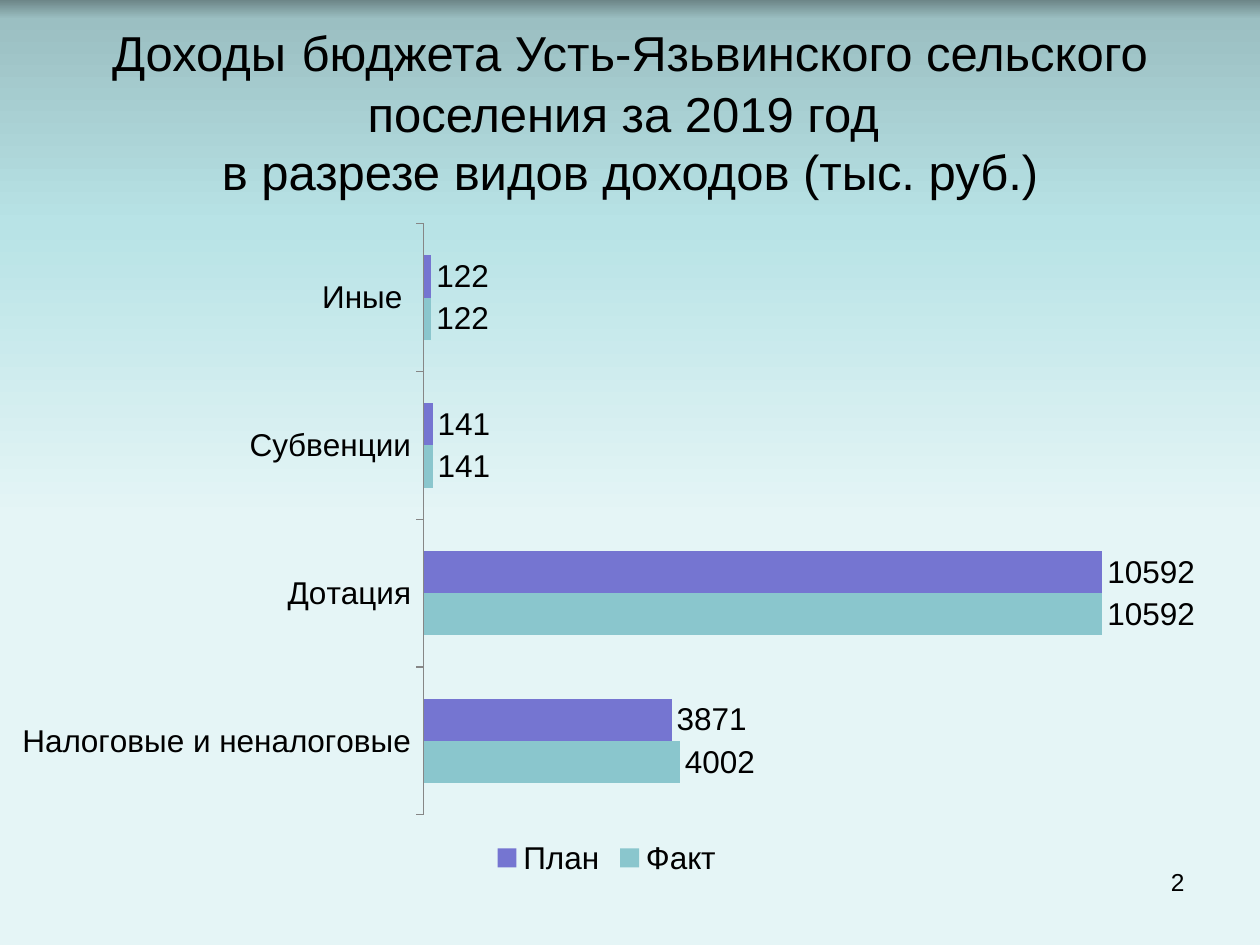
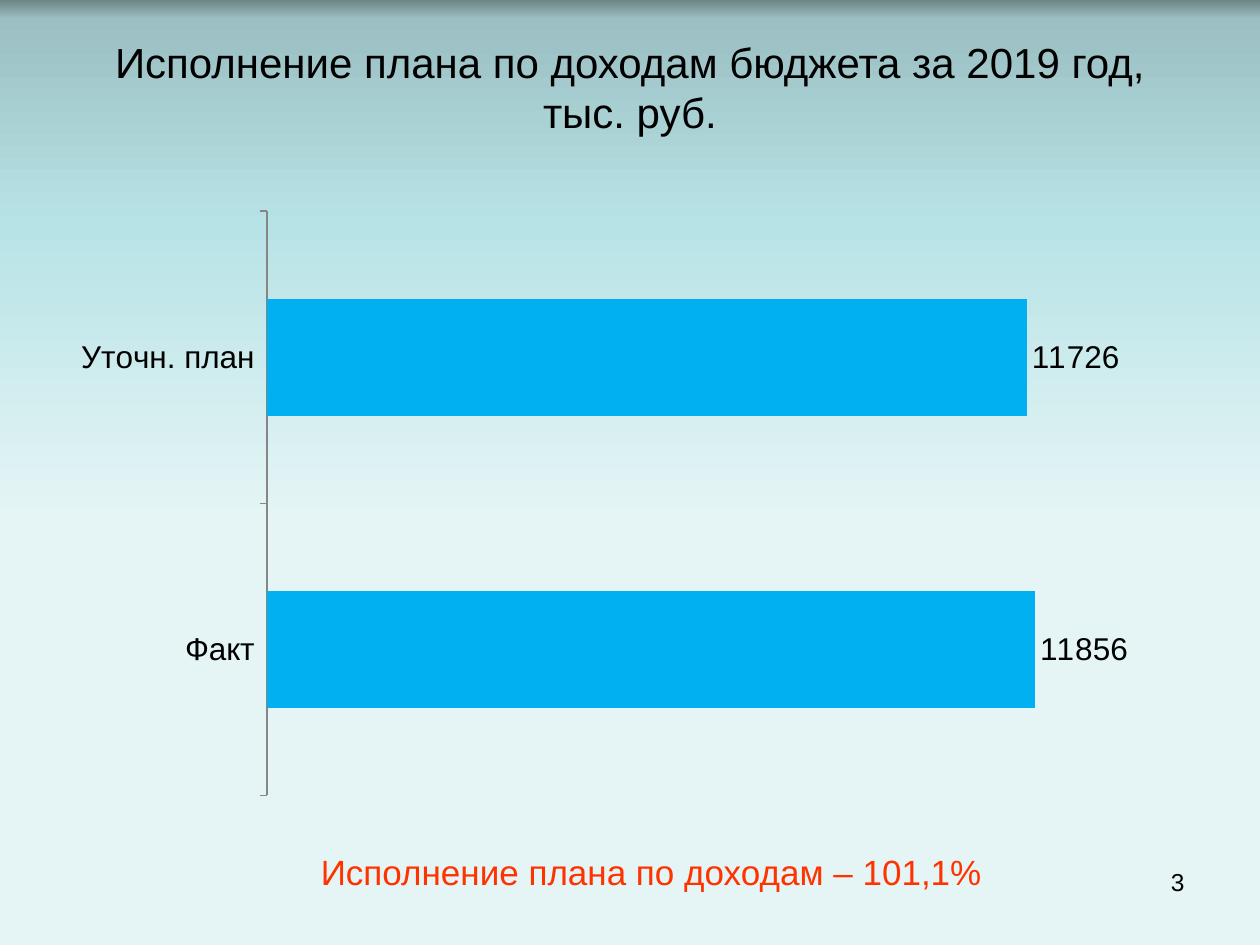
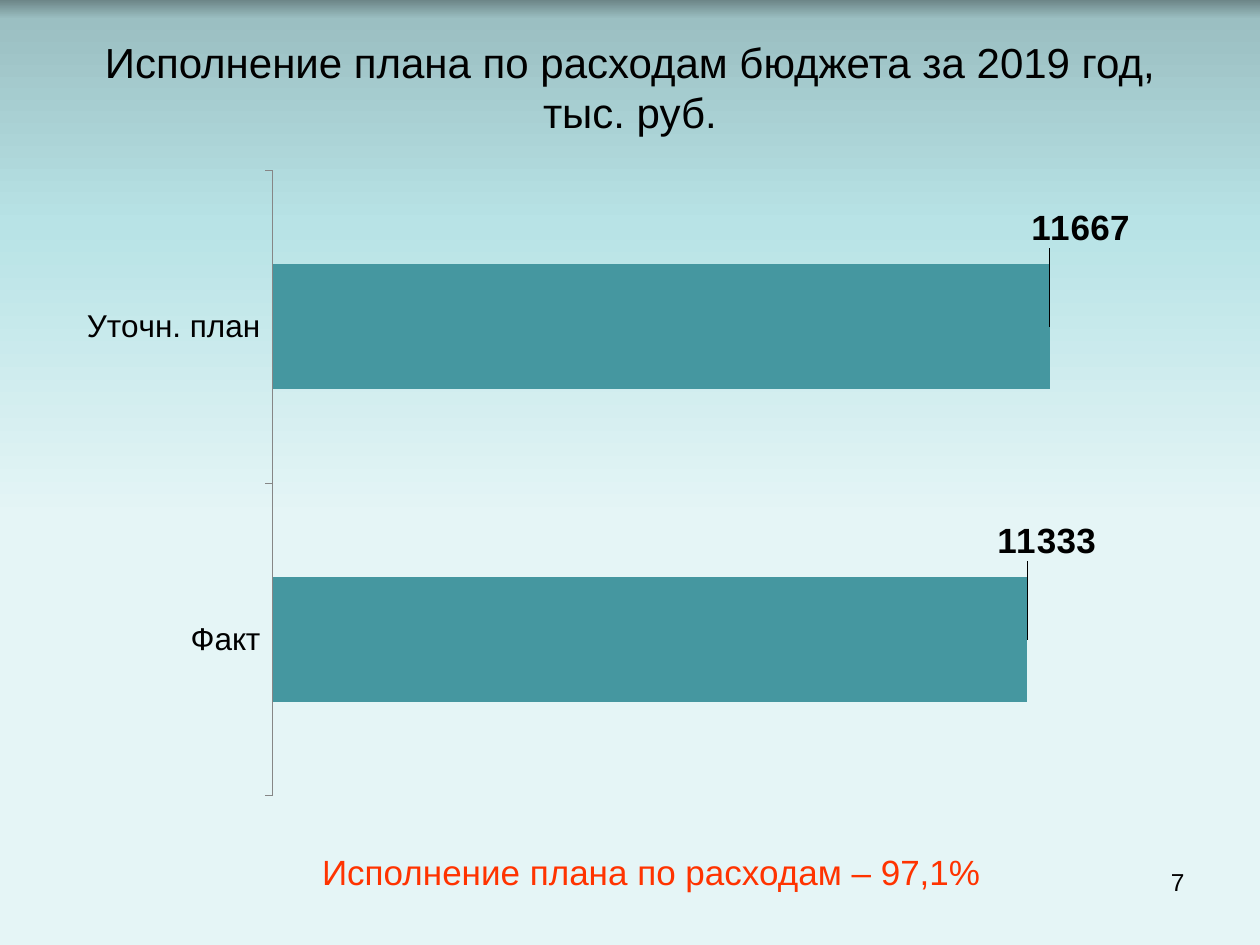
from pptx import Presentation
from pptx.chart.data import CategoryChartData
from pptx.dml.color import RGBColor
from pptx.enum.chart import XL_CHART_TYPE as ChartType, XL_LABEL_POSITION as LabelPos
from pptx.enum.chart import XL_LEGEND_POSITION as LegendPos, XL_TICK_MARK as Tick
from pptx.enum.text import MSO_ANCHOR as Anchor, PP_ALIGN as Align
from pptx.oxml import parse_xml
from pptx.oxml.ns import nsdecls
from pptx.util import Inches, Pt

FONT = "Arial"
BLACK = RGBColor(0x00, 0x00, 0x00)
ORANGE = RGBColor(0xFF, 0x33, 0x00)
AXIS_GRAY = RGBColor(0x86, 0x86, 0x86)
AQUA = RGBColor(0x8A, 0xC6, 0xCD)
VIOLET = RGBColor(0x75, 0x75, 0xD1)
BLUE = RGBColor(0x00, 0xB0, 0xF0)
TEAL = RGBColor(0x45, 0x97, 0xA0)
BACKDROP_STOPS = [(0, "6D8688"), (2, "9BBFC2"), (24, "B8E3E6"), (55, "E5F5F6")]

# plot: left, top, width, height as shares of the chart
# label_shifts: moves of the value labels as shares of the chart, by point
SLIDES = [
    dict(
        title=[[("Доходы", 28), (" ", 32),
                ("бюджета Усть-Язьвинского сельского поселения за 2019 год ", 28)],
               [("в разрезе видов доходов (тыс. руб.)", 28)]],
        title_box=(0.5, 0.17, 9, 1.38),
        chart_box=(-0.03, 1.67, 9.69, 5.33), plot=(0.35, 0.02, 0.63, 0.88), top_value=12000,
        categories=["Налоговые и неналоговые", "Дотация", "Субвенции", "Иные "],
        series=[("Факт", [4002, 10592, 141, 122], AQUA),
                ("План", [3871, 10592, 141, 122], VIOLET)],
        label_shifts=[], result=None, number="2"),
    dict(
        title=[[("Исполнение плана по доходам бюджета за 2019 год,", 24)],
               [("тыс. руб.", 24)]],
        title_box=(0.5, 0.3, 9, 0.78),
        chart_box=(0.5, 1.58, 9, 4.83), plot=(0.18, 0.02, 0.8, 0.96), top_value=14000,
        categories=["Факт", "Уточн. план"],
        series=[("Series 1", [11856, 11726], BLUE)],
        label_shifts=[], result="Исполнение плана по доходам – 101,1%", number="3"),
    dict(
        title=[[("Исполнение плана по расходам бюджета за 2019 год, тыс. руб.", 24)]],
        title_box=(0.5, 0.3, 9, 0.78),
        chart_box=(0.5, 1.25, 9.25, 5.17), plot=(0.18, 0.02, 0.8, 0.96), top_value=14000,
        categories=["Факт", "Уточн. план"],
        series=[("Series 1", [11333, 11667], TEAL)],
        label_shifts=[(-0.03, -0.15), (-0.02, -0.15)],
        result="Исполнение плана по расходам – 97,1%", number="7"),
]


def add_text(slide, box, lines, align, anchor=Anchor.MIDDLE, color=BLACK):
    """Add one paragraph; lines are lists of (text, size) runs."""
    frame = slide.shapes.add_textbox(*map(Inches, box)).text_frame
    frame.word_wrap = True
    frame.vertical_anchor = anchor
    paragraph = frame.paragraphs[0]
    paragraph.alignment = align
    for i, line in enumerate(lines):
        if i:
            paragraph.add_line_break()
        for text, size in line:
            run = paragraph.add_run()
            run.text = text
            run.font.name = FONT
            run.font.size = Pt(size)
            run.font.color.rgb = color


def manual_layout(modes, **shares):
    settings = "".join(f'<c:{tag} val="{value}"/>' for tag, value in {**modes, **shares}.items())
    return parse_xml(f'<c:layout {nsdecls("c")}><c:manualLayout>{settings}'
                     "</c:manualLayout></c:layout>")


prs = Presentation()
prs.slide_width, prs.slide_height = Inches(10), Inches(7.5)

# All slides inherit the backdrop from the master
backdrop = prs.slide_master.background.fill
backdrop.gradient()
backdrop.gradient_angle = 270
stop_list = prs.slide_master.element.xpath("./p:cSld/p:bg//a:gsLst")[0]
for old_stop in list(stop_list):
    stop_list.remove(old_stop)
for percent, color in BACKDROP_STOPS:
    stop_list.append(parse_xml(f'<a:gs {nsdecls("a")} pos="{percent * 1000}">'
                               f'<a:srgbClr val="{color}"/></a:gs>'))

for content in SLIDES:
    slide = prs.slides.add_slide(prs.slide_layouts[6])
    add_text(slide, content["title_box"], content["title"], Align.CENTER)

    data = CategoryChartData()
    data.categories = content["categories"]
    for name, values, _ in content["series"]:
        data.add_series(name, values)
    chart = slide.shapes.add_chart(ChartType.BAR_CLUSTERED,
                                   *map(Inches, content["chart_box"]), data).chart
    chart.has_title = False
    chart.font.name = FONT
    chart.font.size = Pt(18)
    chart.font.color.rgb = BLACK
    chart.has_legend = len(content["series"]) > 1
    if chart.has_legend:
        chart.legend.position = LegendPos.BOTTOM
        chart.legend.include_in_layout = False

    plot_area = chart.element.xpath(".//c:plotArea")[0]
    for old_layout in plot_area.xpath("./c:layout"):
        plot_area.remove(old_layout)
    left, top, width, height = content["plot"]
    plot_area.insert(0, manual_layout(
        dict(layoutTarget="inner", xMode="edge", yMode="edge"),
        x=left, y=top, w=width, h=height))

    chart.category_axis.major_tick_mark = Tick.OUTSIDE
    chart.category_axis.format.line.color.rgb = AXIS_GRAY
    chart.category_axis.format.line.width = Pt(0.75)
    chart.value_axis.visible = False
    chart.value_axis.has_major_gridlines = False
    chart.value_axis.minimum_scale = 0
    chart.value_axis.maximum_scale = content["top_value"]

    bars = chart.plots[0]
    bars.vary_by_categories = False
    bars.gap_width = 150
    bars.overlap = 0
    for series, (_, _, color) in zip(bars.series, content["series"]):
        series.format.fill.solid()
        series.format.fill.fore_color.rgb = color
        series.data_labels.show_value = True
        series.data_labels.position = LabelPos.OUTSIDE_END
        for i, (dx, dy) in enumerate(content["label_shifts"]):
            label = series.points[i].data_label
            label.position = LabelPos.OUTSIDE_END
            label.font.name = FONT
            label.font.size = Pt(20)
            label.font.bold = True
            label.font.color.rgb = BLACK
            label_xml = chart.element.xpath(f".//c:dLbl[c:idx/@val='{i}']")[0]
            label_xml.insert(1, manual_layout({}, x=dx, y=dy))

    add_text(slide, (7.17, 6.83, 2.33, 0.52), [[(content["number"], 14)]],
             Align.RIGHT, Anchor.TOP)
    if content["result"]:
        add_text(slide, (2.17, 6.75, 6, 0.33), [[(content["result"], 20)]],
                 Align.CENTER, color=ORANGE)

prs.save("out.pptx")
